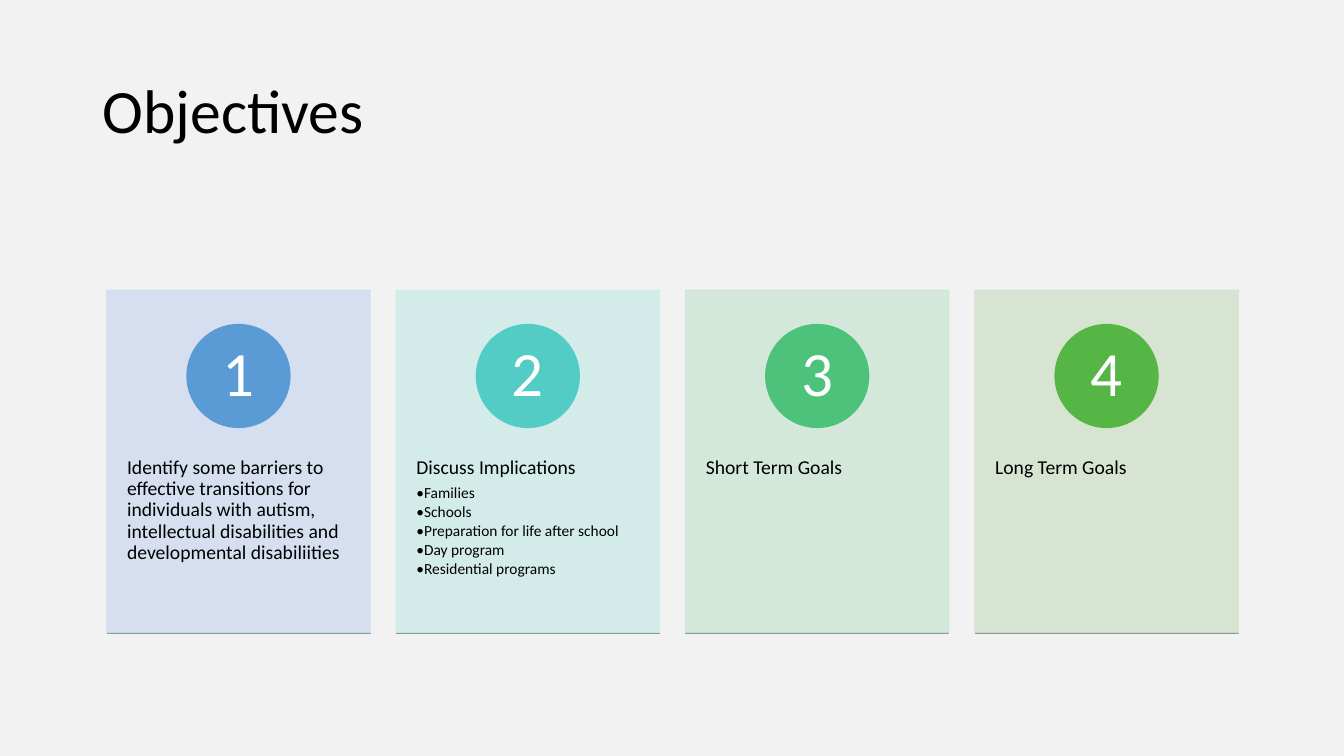
"""Build the Objectives slide: a title above four numbered cards."""
from lxml import etree
from pptx import Presentation
from pptx.dml.color import RGBColor
from pptx.enum.shapes import MSO_SHAPE
from pptx.enum.text import MSO_ANCHOR, PP_ALIGN
from pptx.oxml.ns import qn
from pptx.util import Inches, Pt

RECTANGLE, OVAL = MSO_SHAPE.RECTANGLE, MSO_SHAPE.OVAL
TOP, MIDDLE = MSO_ANCHOR.TOP, MSO_ANCHOR.MIDDLE
LEFT, CENTER = PP_ALIGN.LEFT, PP_ALIGN.CENTER
FONT = "Calibri"
BLACK = RGBColor(0x00, 0x00, 0x00)
WHITE = RGBColor(0xFF, 0xFF, 0xFF)
BACKGROUND = RGBColor(0xF2, 0xF2, 0xF2)
RULE_GRAY = RGBColor(0x8C, 0x9A, 0x94)

GRID_LEFT, COLUMN_STEP = 1.06, 2.87
CARD_TOP, CARD_WIDTH, CARD_HEIGHT = 2.88, 2.61, 3.4
CIRCLE_TOP, CIRCLE_SIZE, NUMBER_SIZE = 3.22, 1.02, 0.72
BULLET_INDENT = Inches(0.06)
RULE_HEIGHT = Pt(0.01)

CARDS = [
    ("Identify some barriers to effective transitions for individuals with autism, "
     "intellectual disabilities and developmental disabiliities", [],
     RGBColor(0xD2, 0xDE, 0xEF), RGBColor(0x5B, 0x9B, 0xD5), RGBColor(0x57, 0xB7, 0xD1)),
    ("Discuss Implications",
     ["Families", "Schools", "Preparation for life after school", "Day program",
      "Residential programs"],
     RGBColor(0xD0, 0xEC, 0xEA), RGBColor(0x53, 0xCC, 0xC5), RGBColor(0x4F, 0xC7, 0xA0)),
    ("Short Term Goals", [],
     RGBColor(0xD0, 0xE7, 0xD8), RGBColor(0x4C, 0xC2, 0x7B), RGBColor(0x48, 0xBD, 0x58)),
    ("Long Term Goals", [],
     RGBColor(0xD5, 0xE3, 0xCF), RGBColor(0x55, 0xB6, 0x46), RGBColor(0x70, 0xAD, 0x47)),
]

presentation = Presentation()
presentation.slide_width, presentation.slide_height = Inches(13.33), Inches(7.5)
slide = presentation.slides.add_slide(presentation.slide_layouts[6])
slide.background.fill.solid()
slide.background.fill.fore_color.rgb = BACKGROUND


def add_block(kind, left, top, width, height, color):
    """Add a shape whose fill and outline share one colour."""
    shape = slide.shapes.add_shape(kind, left, top, width, height)
    shape.shadow.inherit = False
    shape.fill.solid()
    shape.fill.fore_color.rgb = color
    shape.line.color.rgb = color
    shape.line.width = Pt(1)
    return shape


def add_text(box, lines, insets, anchor, alignment, color):
    """Add a clear text frame from (text, size, spacing share, bulleted) lines."""
    shape = slide.shapes.add_shape(RECTANGLE, *[Inches(length) for length in box])
    shape.shadow.inherit = False
    shape.fill.background()
    shape.line.fill.background()
    frame = shape.text_frame
    frame.word_wrap = True
    frame.vertical_anchor = anchor
    frame.margin_left = frame.margin_right = Inches(insets[0])
    frame.margin_top = frame.margin_bottom = Inches(insets[1])
    for index, (text, size, spacing, bulleted) in enumerate(lines):
        paragraph = frame.add_paragraph() if index else frame.paragraphs[0]
        paragraph.alignment = alignment
        paragraph.line_spacing = 0.9
        paragraph.space_after = Pt(size * spacing)
        if bulleted:
            paragraph.level = 1
            properties = paragraph._p.get_or_add_pPr()
            properties.set("marL", str(BULLET_INDENT))
            properties.set("indent", str(-BULLET_INDENT))
            etree.SubElement(properties, qn("a:buFont"), typeface=FONT)
            etree.SubElement(properties, qn("a:buChar"), char="•")
        run = paragraph.add_run()
        run.text = text
        run.font.name = FONT
        run.font.size = Pt(size)
        run.font.color.rgb = color


add_text((0.92, 0.4, 11.5, 1.45), [("Objectives", 44, 0, False)],
         (0.1, 0.05), MIDDLE, LEFT, BLACK)

for column, (heading, bullets, card_color, circle_color, rule_color) in enumerate(CARDS):
    left = GRID_LEFT + column * COLUMN_STEP
    card = add_block(RECTANGLE, Inches(left), Inches(CARD_TOP),
                     Inches(CARD_WIDTH), Inches(CARD_HEIGHT), card_color)
    for color_element in card._element.spPr.iter(qn("a:srgbClr")):
        etree.SubElement(color_element, qn("a:alpha"), val="90000")

    lines = [(heading, 14, 0.35, False)] + [(bullet, 11, 0.15, True) for bullet in bullets]
    add_text((left, 4.18, CARD_WIDTH, 2.04), lines, (0.2, 0.36), TOP, LEFT, BLACK)

    circle_left = left + (CARD_WIDTH - CIRCLE_SIZE) / 2
    add_block(OVAL, Inches(circle_left), Inches(CIRCLE_TOP),
              Inches(CIRCLE_SIZE), Inches(CIRCLE_SIZE), circle_color)
    margin = (CIRCLE_SIZE - NUMBER_SIZE) / 2
    add_text((circle_left + margin, CIRCLE_TOP + margin, NUMBER_SIZE, NUMBER_SIZE),
             [(str(column + 1), 45, 0.35, False)], (0.08, 0.01), MIDDLE, CENTER, WHITE)

    rule = add_block(RECTANGLE, Inches(left), Inches(CARD_TOP + CARD_HEIGHT),
                     Inches(CARD_WIDTH), RULE_HEIGHT, rule_color)
    rule.line.color.rgb = RULE_GRAY
    rule.line.width = Pt(0.5)

presentation.save("out.pptx")
